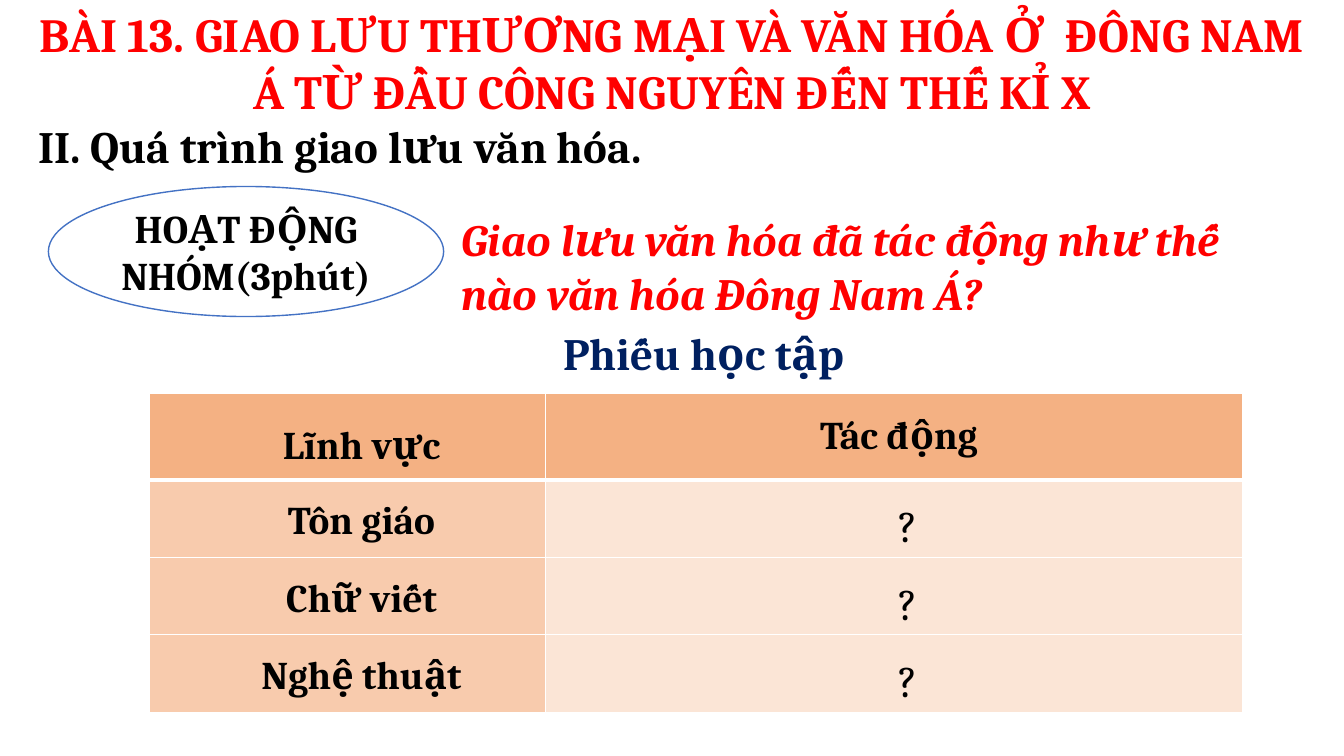
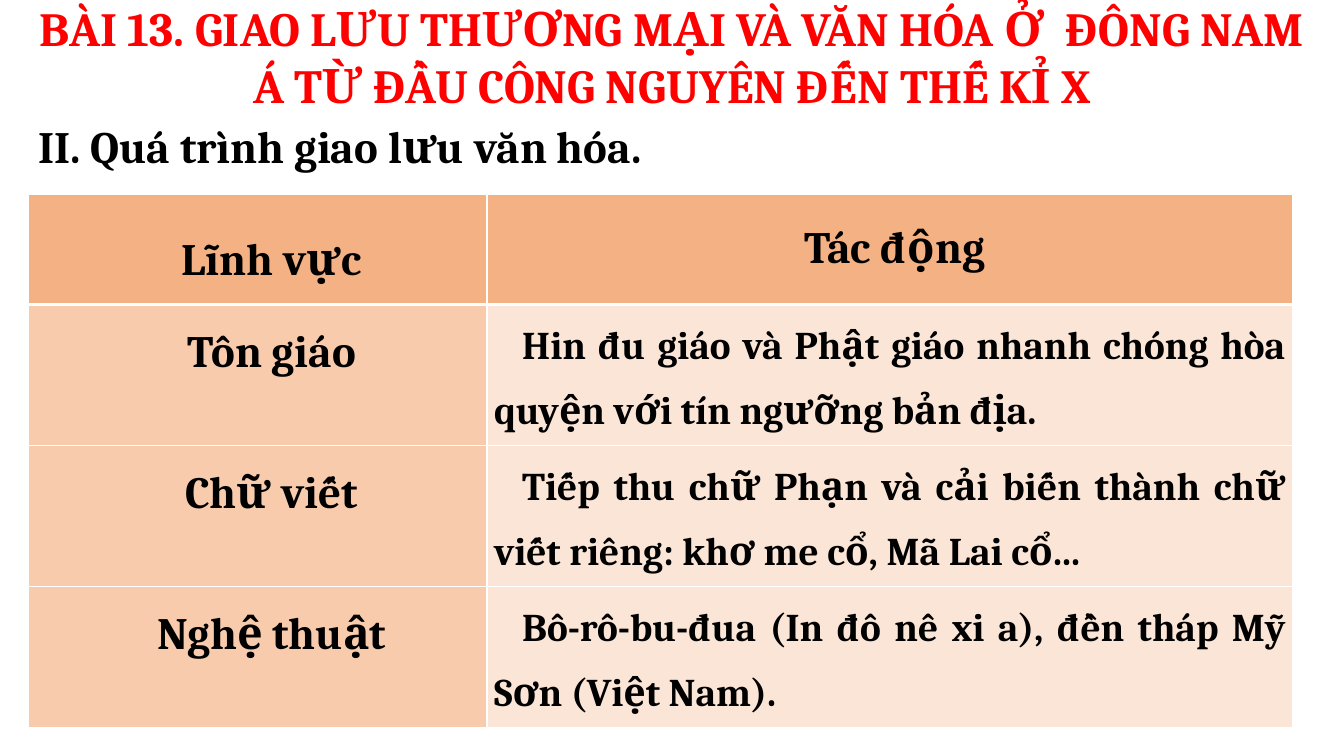
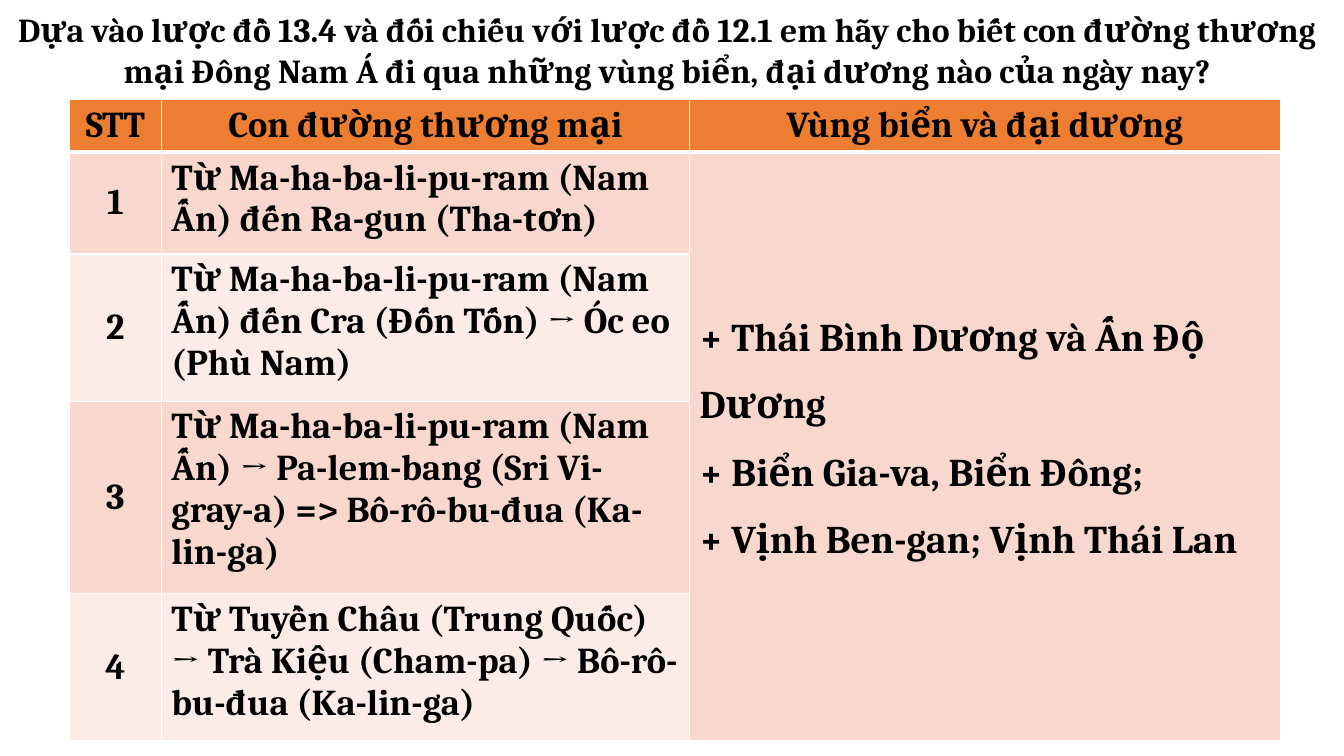
import pptx
import pptx.util
import pptx.dml.color
import pptx.enum.shapes
import pptx.enum.text
import pptx.oxml
import pptx.oxml.ns
from dataclasses import dataclass

Inches = pptx.util.Inches
Pt = pptx.util.Pt
ALIGN = pptx.enum.text.PP_ALIGN
ANCHOR = pptx.enum.text.MSO_ANCHOR


@dataclass(frozen=True)
class Theme:
    font: str = "Cambria"
    black: str = "000000"
    white: str = "FFFFFF"
    red: str = "FF0000"
    navy: str = "002060"
    blue: str = "4472C4"
    # Table fills
    head: str = "F4B183"
    label: str = "F8CBAD"
    body: str = "FBE5D6"
    route_head: str = "ED7D31"
    route_odd: str = "F8D7CE"
    route_even: str = "FCECE8"
    # Type sizes
    title: int = 34
    heading: int = 32
    text: int = 28
    route: int = 26
    question: int = 24


T = Theme()
LESSON = ("BÀI 13. GIAO LƯU THƯƠNG MẠI VÀ VĂN HÓA Ở  ĐÔNG NAM Á "
          "TỪ ĐẦU CÔNG NGUYÊN ĐẾN THẾ KỈ X")
SECTION = "II. Quá trình giao lưu văn hóa."
FIELDS = ["Tôn giáo", "Chữ viết", "Nghệ thuật"]


def rgb(value):
    return pptx.dml.color.RGBColor.from_string(value)


class Deck:
    def __init__(self):
        self.prs = pptx.Presentation()
        self.prs.slide_width = Inches(13.33)
        self.prs.slide_height = Inches(7.5)
        self.s = None

    def add_lines(self, tf, lines, size, color=T.black, bold=True,
                  italic=False, align=ALIGN.LEFT, spacing=1.0, indent=0):
        for i, line in enumerate(lines):
            p = tf.paragraphs[0] if i == 0 else tf.add_paragraph()
            p.alignment = align
            p.line_spacing = spacing
            if indent:
                p._p.get_or_add_pPr().set("indent", str(Inches(indent)))
            r = p.add_run()
            r.text = line
            r.font.name = T.font
            r.font.size = Pt(size)
            r.font.bold = bold
            r.font.italic = italic
            r.font.color.rgb = rgb(color)

    def slide(self, title, box, size=T.title, color=T.red):
        """Start a title-only slide and place its title."""
        self.s = self.prs.slides.add_slide(self.prs.slide_layouts[5])
        sp = self.s.shapes.title
        sp.left, sp.top, sp.width, sp.height = map(Inches, box)
        tf = sp.text_frame
        tf.word_wrap = True
        tf.auto_size = pptx.enum.text.MSO_AUTO_SIZE.NONE
        tf.vertical_anchor = ANCHOR.TOP
        self.add_lines(tf, [title], size, color, align=ALIGN.CENTER)

    def text(self, line, box, size=T.heading, **style):
        tf = self.s.shapes.add_textbox(*map(Inches, box)).text_frame
        tf.word_wrap = True
        self.add_lines(tf, [line], size, **style)

    def ellipse(self, line, box):
        sp = self.s.shapes.add_shape(
            pptx.enum.shapes.MSO_SHAPE.OVAL, *map(Inches, box))
        sp.shadow.inherit = False
        sp.fill.solid()
        sp.fill.fore_color.rgb = rgb(T.white)
        sp.line.color.rgb = rgb(T.blue)
        sp.line.width = Pt(1)
        tf = sp.text_frame
        tf.word_wrap = True
        tf.vertical_anchor = ANCHOR.MIDDLE
        self.add_lines(tf, [line], T.text, align=ALIGN.CENTER)

    def table(self, left, top, cols, rows):
        """Add an empty table with white rules, heavier under the header."""
        table = self.s.shapes.add_table(
            len(rows), len(cols), Inches(left), Inches(top),
            Inches(sum(cols)), Inches(sum(rows))).table
        for column, width in zip(table.columns, cols):
            column.width = Inches(width)
        for row, height in zip(table.rows, rows):
            row.height = Inches(height)
        for i in range(len(rows)):
            for j in range(len(cols)):
                self.borders(table.cell(i, j), i)
        return table

    def borders(self, cell, row):
        widths = {"L": 1, "R": 1, "T": 3 if row == 1 else 1,
                  "B": 3 if row == 0 else 1}
        tcPr = cell._tc.get_or_add_tcPr()
        for n, (side, width) in enumerate(widths.items()):
            tcPr.insert(n, pptx.oxml.parse_xml(
                f'<a:ln{side} {pptx.oxml.ns.nsdecls("a")} w="{Pt(width)}">'
                f'<a:solidFill><a:srgbClr val="{T.white}"/></a:solidFill>'
                f'</a:ln{side}>'))

    def cell(self, cell, lines, fill, size, anchor=ANCHOR.TOP, margins=None,
             **style):
        cell.fill.solid()
        cell.fill.fore_color.rgb = rgb(fill)
        cell.vertical_anchor = anchor
        if margins:
            side, top, bottom = map(Inches, margins)
            cell.margin_left = cell.margin_right = side
            cell.margin_top, cell.margin_bottom = top, bottom
        self.add_lines(cell.text_frame, lines, size, **style)

    def impact_table(self, left, top, cols, rows, label_size, impacts,
                     **impact_style):
        """Table of cultural fields and the impact on each."""
        table = self.table(left, top, cols, rows)
        tight = dict(margins=(0.07, 0, 0))
        label = dict(tight, size=label_size, align=ALIGN.CENTER,
                     spacing=1.44, indent=0.28)
        self.cell(table.cell(0, 0), ["Lĩnh vực"], T.head,
                  anchor=ANCHOR.MIDDLE, **label)
        self.cell(table.cell(0, 1), ["Tác động"], T.head, label_size,
                  anchor=ANCHOR.MIDDLE, align=ALIGN.CENTER, indent=0.1,
                  **tight)
        for i, (field, impact) in enumerate(zip(FIELDS, impacts), 1):
            self.cell(table.cell(i, 0), [field], T.label, **label)
            self.cell(table.cell(i, 1), [impact], T.body, spacing=1.44,
                      indent=0.28, **tight, **impact_style)


def main():
    d = Deck()
    section_box = (0.28, 1.13, 9.99, 0.64)

    # Group activity and worksheet
    d.slide(LESSON, (0.19, 0, 12.95, 1.25))
    d.text(SECTION, section_box)
    d.ellipse("HOẠT ĐỘNG NHÓM(3phút)", (0.48, 1.85, 3.92, 1.29))
    d.impact_table(1.48, 3.9, [3.93, 6.91], [0.86, 0.73, 0.69, 0.69], T.text,
                   ["?"] * 3, size=T.heading, bold=False, align=ALIGN.CENTER)
    d.text("Phiếu học tập", (4.48, 3.18, 5, 0.64), color=T.navy,
           align=ALIGN.CENTER)
    d.text("Giao lưu văn hóa đã tác động như thế nào văn hóa Đông Nam Á?",
           (4.48, 2.05, 7.84, 1.18), color=T.red, italic=True)

    # Completed worksheet
    d.slide(LESSON, (0.19, -0.06, 12.95, 1.25))
    d.text(SECTION, section_box)
    d.impact_table(
        0.28, 1.93, [4.55, 7.99], [1.09] + [1.4] * 3, T.heading,
        ["Hin đu giáo và Phật giáo nhanh chóng hòa quyện với tín ngưỡng "
         "bản địa.",
         "Tiếp thu chữ Phạn và cải biến thành chữ viết riêng: khơ me cổ, "
         "Mã Lai cổ...",
         "Bô-rô-bu-đua (In đô nê xi a), đền tháp Mỹ Sơn (Việt Nam)."],
        size=T.text, align=ALIGN.JUSTIFY)

    # Trade routes
    d.slide("Dựa vào lược đồ 13.4 và đối chiếu với lược đồ 12.1 em hãy cho "
            "biết con đường thương mại Đông Nam Á đi qua những vùng biển, "
            "đại dương nào của ngày nay?",
            (-0.05, 0.04, 13.33, 0.91), T.question, T.black)
    table = d.table(0.69, 0.99, [0.91, 5.24, 5.86],
                    [0.52, 1.01, 1.46, 1.91, 1.46])
    heads = ["STT", "Con đường thương mại", "Vùng biển và đại dương"]
    for j, head in enumerate(heads):
        d.cell(table.cell(0, j), [head], T.route_head, T.route,
               align=ALIGN.CENTER)
    routes = [
        "Từ Ma-ha-ba-li-pu-ram (Nam Ấn) đến Ra-gun (Tha-tơn)",
        "Từ Ma-ha-ba-li-pu-ram (Nam Ấn) đến Cra (Đốn Tốn) → Óc eo "
        "(Phù Nam)",
        "Từ Ma-ha-ba-li-pu-ram (Nam Ấn) → Pa-lem-bang (Sri Vi-gray-a) => "
        "Bô-rô-bu-đua (Ka-lin-ga)",
        "Từ Tuyền Châu (Trung Quốc) → Trà Kiệu (Cham-pa) → Bô-rô-bu-đua "
        "(Ka-lin-ga)"]
    for i, route in enumerate(routes, 1):
        fill = T.route_odd if i % 2 else T.route_even
        d.cell(table.cell(i, 0), [str(i)], fill, T.route,
               anchor=ANCHOR.MIDDLE, align=ALIGN.CENTER)
        d.cell(table.cell(i, 1), [route], fill, T.route)

    # Seas and oceans shared by all routes
    table.cell(1, 2).merge(table.cell(4, 2))
    d.cell(table.cell(1, 2),
           ["+ Thái Bình Dương và Ấn Độ Dương",
            "+ Biển Gia-va, Biển Đông;",
            "+ Vịnh Ben-gan; Vịnh Thái Lan"],
           T.route_odd, T.text, margins=(0.1, 1.4, 0.05), spacing=1.5)

    d.prs.save("out.pptx")


if __name__ == "__main__":
    main()
